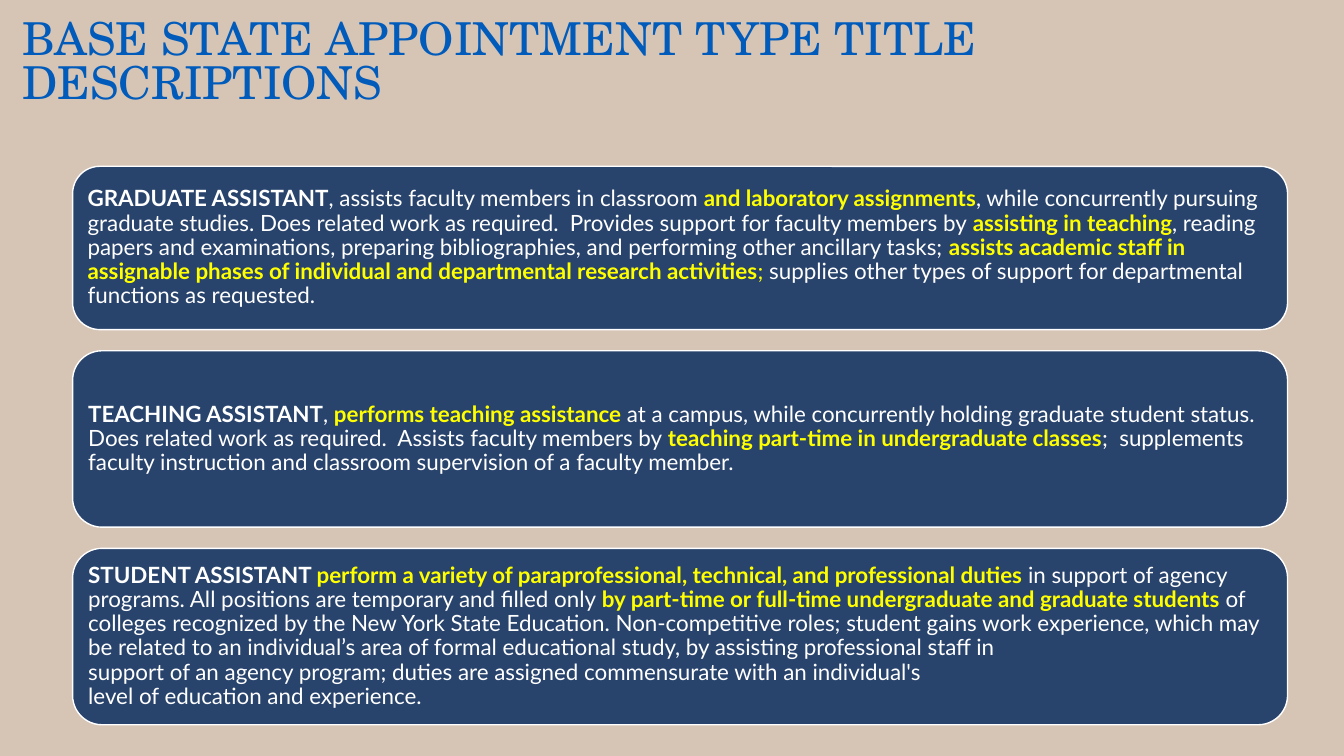
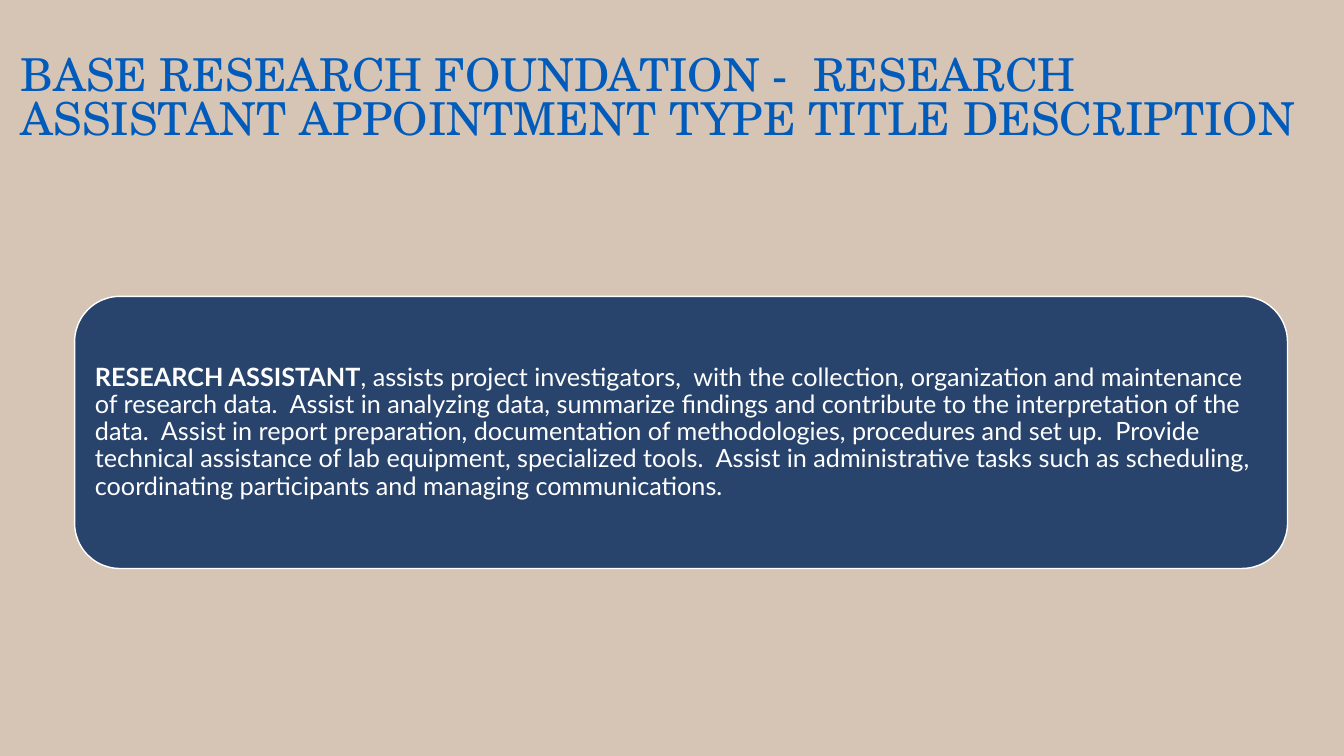
from dataclasses import dataclass
from enum import Enum

from pptx import Presentation
from pptx.dml.color import RGBColor
from pptx.enum.shapes import MSO_SHAPE as Shape
from pptx.enum.text import MSO_ANCHOR as Anchor, PP_ALIGN as Align
from pptx.slide import Slide
from pptx.text.text import TextFrame
from pptx.util import Inches, Pt

SAND = RGBColor(0xD6, 0xC4, 0xB5)
NAVY = RGBColor(0x28, 0x43, 0x6C)
BLUE = RGBColor(0x00, 0x5B, 0xBB)
WHITE = RGBColor(0xFF, 0xFF, 0xFF)
YELLOW = RGBColor(0xFF, 0xFF, 0x00)

TITLE_FONT, BODY_FONT = "TeX Gyre Schola", "Lato"
TITLE_SIZE, TITLE_HEIGHT = 32.4, 0.78
SLIDE_W, SLIDE_H = 13.33, 7.5
CARD_RIGHT, CARD_GAP, CARD_INSET = 12.77, 0.21, 0.07


class Tone(Enum):
    PLAIN = (WHITE, False)
    STRONG = (WHITE, True)
    KEY = (YELLOW, True)
    KEY_PLAIN = (YELLOW, False)


@dataclass(frozen=True)
class Span:
    text: str
    tone: Tone = Tone.PLAIN


@dataclass(frozen=True)
class Card:
    height: float
    spans: tuple[Span, ...]


@dataclass(frozen=True)
class Page:
    title: str
    title_left: float
    title_top: float
    title_width: float
    card_left: float
    card_top: float
    text_size: int
    cards: tuple[Card, ...]


GRADUATE = Card(1.62, (
    Span("GRADUATE ASSISTANT", Tone.STRONG),
    Span(", assists faculty members in classroom "),
    Span("and laboratory assignments", Tone.KEY),
    Span(", while concurrently pursuing graduate studies. Does related work as required.  "
         "Provides support for faculty members by "),
    Span("assisting in teaching", Tone.KEY),
    Span(", reading papers and examinations, preparing bibliographies, "
         "and performing other ancillary tasks; "),
    Span("assists academic staff in assignable phases of individual "
         "and departmental research activities", Tone.KEY),
    Span(";", Tone.KEY_PLAIN),
    Span(" supplies other types of support for departmental functions as requested."),
))
TEACHING = Card(1.75, (
    Span("TEACHING ASSISTANT", Tone.STRONG),
    Span(", "),
    Span("performs teaching assistance ", Tone.KEY),
    Span("at a campus, while concurrently holding graduate student status. "
         "Does related work as required.  Assists faculty members by "),
    Span("teaching part-time in undergraduate classes", Tone.KEY),
    Span(";  supplements faculty instruction and classroom supervision of a faculty member."),
))
STUDENT = Card(1.75, (
    Span("STUDENT ASSISTANT ", Tone.STRONG),
    Span("perform a variety of paraprofessional, technical, and professional duties ", Tone.KEY),
    Span("in support of agency programs. All positions are temporary and filled only "),
    Span("by part-time or full-time undergraduate and graduate students", Tone.KEY),
    Span(" of colleges recognized by the New York State Education. Non-competitive roles; "
         "student gains work experience, which may be related to an individual’s area of "
         "formal educational study, by assisting professional staff in\n"
         "support of an agency program; duties are assigned commensurate with an individual's\n"
         "level of education and experience."),
))
RESEARCH = Card(2.7, (
    Span("RESEARCH ASSISTANT", Tone.STRONG),
    Span(", assists project investigators,  with the collection, organization and maintenance "
         "of research data.  Assist in analyzing data, summarize findings and contribute to the "
         "interpretation of the data.  Assist in report preparation, documentation of "
         "methodologies, procedures and set up.  Provide technical assistance of lab equipment, "
         "specialized tools.  Assist in administrative tasks such as scheduling, coordinating "
         "participants and managing communications."),
))

PAGES = (
    Page("BASE STATE APPOINTMENT TYPE TITLE DESCRIPTIONS",
         0.12, 0.34, 13.21, 0.72, 1.65, 16, (GRADUATE, TEACHING, STUDENT)),
    Page("BASE RESEARCH FOUNDATION -  RESEARCH ASSISTANT APPOINTMENT TYPE TITLE DESCRIPTION",
         0.11, 0.7, 12.85, 0.74, 2.94, 18, (RESEARCH,)),
)


def write(tf: TextFrame, spans: tuple[Span, ...], size: float, spacing: float,
          font: str = BODY_FONT, color: RGBColor | None = None) -> None:
    tf.word_wrap = True
    p = tf.paragraphs[0]
    p.alignment = Align.LEFT
    p.line_spacing = spacing
    for span in spans:
        tone_color, bold = span.tone.value
        for i, line in enumerate(span.text.split("\n")):
            if i:
                p.add_line_break()
            r = p.add_run()
            r.text = line
            r.font.name, r.font.size, r.font.bold = font, Pt(size), bold
            r.font.color.rgb = color or tone_color


def add_title(s: Slide, page: Page) -> None:
    sp = s.shapes.add_textbox(Inches(page.title_left), Inches(page.title_top),
                              Inches(page.title_width), Inches(TITLE_HEIGHT))
    tf = sp.text_frame
    tf.vertical_anchor = Anchor.BOTTOM
    write(tf, (Span(page.title),), TITLE_SIZE, 0.8, TITLE_FONT, BLUE)


def add_card(s: Slide, card: Card, left: float, top: float, size: int) -> None:
    sp = s.shapes.add_shape(Shape.ROUNDED_RECTANGLE, Inches(left), Inches(top),
                            Inches(CARD_RIGHT - left), Inches(card.height))
    sp.shadow.inherit = False
    sp.fill.solid()
    sp.fill.fore_color.rgb = NAVY
    sp.line.color.rgb = WHITE
    sp.line.width = Pt(1)
    tf = sp.text_frame
    tf.margin_left = tf.margin_right = tf.margin_top = tf.margin_bottom = Inches(CARD_INSET)
    tf.vertical_anchor = Anchor.MIDDLE
    write(tf, card.spans, size, 0.9)


def main() -> None:
    prs = Presentation()
    prs.slide_width, prs.slide_height = Inches(SLIDE_W), Inches(SLIDE_H)
    background = prs.slide_master.background.fill
    background.solid()
    background.fore_color.rgb = SAND
    for page in PAGES:
        s = prs.slides.add_slide(prs.slide_layouts[6])
        add_title(s, page)
        top = page.card_top
        for card in page.cards:
            add_card(s, card, page.card_left, top, page.text_size)
            top += card.height + CARD_GAP
    prs.save("out.pptx")


if __name__ == "__main__":
    main()
